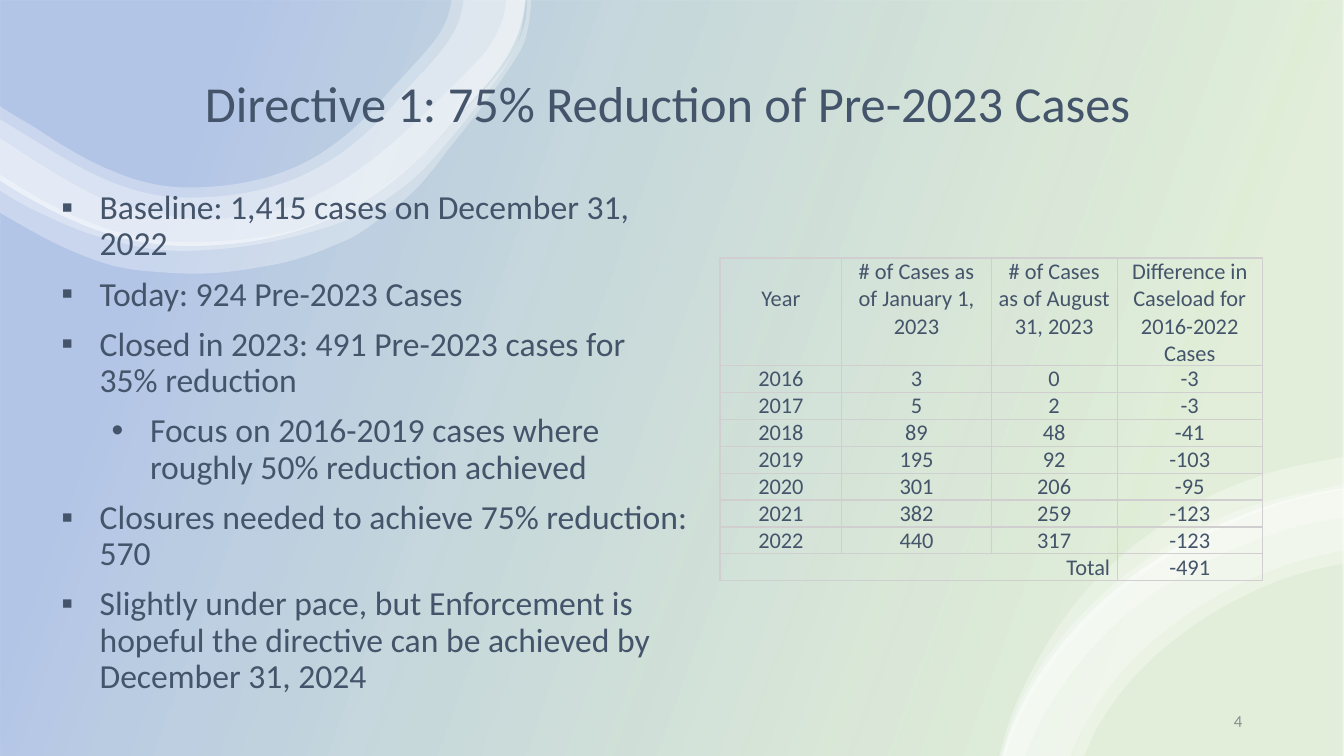
from lxml import etree
from pptx import Presentation
from pptx.dml.color import RGBColor
from pptx.enum import shapes, text
from pptx.oxml import ns
from pptx.util import Inches, Pt

SLATE = RGBColor(0x44, 0x54, 0x6A)
GREY = RGBColor(0x8C, 0x8C, 0x8C)
WHITE = RGBColor(0xFF, 0xFF, 0xFF)
GREEN = RGBColor(0x70, 0xAD, 0x47)
BLUE = RGBColor(0x44, 0x72, 0xC4)
GRID = RGBColor(0xD0, 0xCE, 0xCE)
FONT = "Calibri"


def smooth(*knots):
    padded = [knots[0], *knots, knots[-1]]
    curve = [knots[0]]
    for (ax, ay), (bx, by), (cx, cy), (dx, dy) in zip(padded, padded[1:], padded[2:], padded[3:]):
        curve += [(bx + (cx - ax) / 6, by + (cy - ay) / 6),
                  (cx - (dx - bx) / 6, cy - (dy - by) / 6), (cx, cy)]
    return curve


TOP_OUTER = [(-.02, 1.78), (.03, 1.81), (.09, 1.85), (.14, 1.88),
             (.65, 2.18), (1.17, 2.44), (1.87, 2.44), (3.06, 2.44), (3.83, 1.99), (4.45, 1.26),
             (4.8, .85), (5.17, .56), (5.21, -.01)]
TOP_RIBBONS = [
    (smooth((5.23, -.01), (5.2, .25), (5.07, .56), (4.85, .84), (4.55, 1.16), (4.25, 1.48),
            (3.92, 1.77), (3.43, 2.09), (2.86, 2.3), (2.25, 2.39), (1.62, 2.39),
            (1.03, 2.26), (.48, 2.02), (-.02, 1.72)),
     smooth((-.02, 2.1), (.56, 2.42), (1.1, 2.63), (1.58, 2.7), (2.11, 2.71), (2.64, 2.64),
            (2.98, 2.56), (3.3, 2.44), (3.6, 2.29), (4.1, 1.9), (4.48, 1.44), (4.83, .99),
            (5.15, .52), (5.24, .26), (5.27, -.01))),
    (smooth((5.02, -.01), (4.99, .18), (4.89, .4), (4.74, .6), (4.35, .99), (4.16, 1.18),
            (3.76, 1.53), (3.32, 1.84), (2.82, 2.07), (2.39, 2.15), (1.88, 2.17),
            (1.13, 2.01), (.63, 1.77), (-.02, 1.36)),
     smooth((-.02, 1.88), (.35, 2.09), (.95, 2.34), (1.61, 2.48), (2.29, 2.46), (2.94, 2.34),
            (3.56, 2.13), (4.08, 1.79), (4.48, 1.36), (4.81, .94), (5.05, .6), (5.16, .34),
            (5.22, -.01))),
    ([(4.6, -.01), (4.57, .29), (4.43, .46), (4.17, .74), (4.09, .82), (4.02, .9), (3.95, .99),
      (3.37, 1.67), (2.75, 1.96), (1.87, 1.96), (1.29, 1.96), (.87, 1.72), (.29, 1.36),
      (.19, 1.3), (.08, 1.23), (-.02, 1.17)],
     TOP_OUTER),
    ([(4.48, -.01), (4.45, .26), (4.32, .41), (4.07, .68), (4, .76), (3.92, .84), (3.84, .93),
      (3.57, 1.25), (3.29, 1.48), (2.99, 1.63), (2.67, 1.78), (2.3, 1.86), (1.87, 1.86),
      (1.62, 1.86), (1.39, 1.81), (1.15, 1.71), (.89, 1.61), (.64, 1.46), (.37, 1.28),
      (.24, 1.2), (.11, 1.13), (-.02, 1.04)],
     TOP_OUTER),
]
BOTTOM_OUTER = [(9.94, 7.5), (9.97, 7.42), (9.99, 7.34), (10.02, 7.26),
                (10.49, 6.04), (11.8, 5.1), (13.22, 4.86),
                (13.26, 4.85), (13.3, 4.85), (13.34, 4.84)]
BOTTOM_RIBBONS = [
    (smooth((9.91, 7.5), (10.07, 7), (10.39, 6.38), (10.81, 5.82), (11.34, 5.34),
            (11.95, 4.95), (12.63, 4.68), (13.34, 4.53)),
     smooth((13.34, 4.85), (12.74, 4.99), (12.11, 5.24), (11.52, 5.57), (10.99, 5.98),
            (10.53, 6.47), (10.16, 7.03), (9.97, 7.5))),
    (BOTTOM_OUTER,
     [(13.34, 5.59), (13.11, 5.63), (12.91, 5.68), (12.71, 5.75),
      (12.31, 5.9), (11.94, 6.11), (11.62, 6.37), (11.3, 6.62), (11.05, 6.92), (10.87, 7.24),
      (10.84, 7.3), (10.8, 7.4), (10.75, 7.5)]),
    (smooth((9.93, 7.5), (10.12, 6.96), (10.47, 6.4), (10.93, 5.9), (11.46, 5.49),
            (12.06, 5.16), (12.55, 4.98), (13.34, 4.8)),
     smooth((13.34, 5.13), (12.81, 5.24), (12.21, 5.46), (11.65, 5.75), (11.14, 6.12),
            (10.71, 6.57), (10.36, 7.08), (10.17, 7.5))),
    (BOTTOM_OUTER,
     [(13.34, 5.46), (13.08, 5.51), (12.87, 5.56), (12.66, 5.64),
      (12.25, 5.79), (11.86, 6.01), (11.54, 6.27), (11.2, 6.54), (10.94, 6.85), (10.76, 7.19),
      (10.72, 7.25), (10.66, 7.38), (10.62, 7.5)]),
]

POINTS = [
    ("Baseline: 1,415 cases on December 31, 2022", 0),
    ("Today: 924 Pre-2023 Cases", 0),
    ("Closed in 2023: 491 Pre-2023 cases for 35% reduction", 0),
    ("Focus on 2016-2019 cases where roughly 50% reduction achieved", 1),
    ("Closures needed to achieve 75% reduction: 570", 0),
    ("Slightly under pace, but Enforcement is hopeful the directive can be "
     "achieved by December 31, 2024", 0),
]
BULLETS = [("▪", 0.38), ("•", 0.88)]
CASELOAD = [
    ("Year", "# of Cases as of January 1, 2023", "# of Cases as of August 31, 2023",
     "Difference in Caseload for 2016-2022 Cases"),
    ("2016", "3", "0", "-3"),
    ("2017", "5", "2", "-3"),
    ("2018", "89", "48", "-41"),
    ("2019", "195", "92", "-103"),
    ("2020", "301", "206", "-95"),
    ("2021", "382", "259", "-123"),
    ("2022", "440", "317", "-123"),
    ("Total", "", "", "-491"),
]
COLUMN_WIDTHS = [1.21, 1.48, 1.25, 1.44]
HEADER_HEIGHT, LINE_HEIGHT = 0.75, 0.19


def set_opacity(fill_element, percents):
    for color, percent in zip(fill_element.iter(ns.qn("a:srgbClr")), percents):
        etree.SubElement(color, ns.qn("a:alpha"), val=str(percent * 1000))


def add_backdrop(slide, width, height):
    backdrop = slide.shapes.add_shape(shapes.MSO_SHAPE.RECTANGLE, 0, 0, width, height)
    backdrop.shadow.inherit = False
    backdrop.line.fill.background()
    backdrop.fill.gradient()
    backdrop.fill.gradient_angle = 160
    for stop, color, position in zip(backdrop.fill.gradient_stops, (GREEN, BLUE), (0.16, 0.85)):
        stop.color.rgb = color
        stop.position = position
    set_opacity(backdrop._element.spPr, (20, 40))


def bend(segments):
    for first, second, third in zip(segments[::3], segments[1::3], segments[2::3]):
        first.tag = ns.qn("a:cubicBezTo")
        for segment in (second, third):
            first.append(segment[0])
            segment.getparent().remove(segment)


def add_ribbon(slide, near_edge, far_edge):
    outline = [(Inches(x), Inches(y)) for x, y in near_edge + far_edge]
    builder = slide.shapes.build_freeform(*outline[0])
    builder.add_line_segments(outline[1:], close=True)
    ribbon = builder.convert_to_shape()
    segments = list(ribbon._element.iter(ns.qn("a:lnTo")))
    turn = len(near_edge)
    bend(segments[:turn - 1])
    bend(segments[turn:])
    ribbon.shadow.inherit = False
    ribbon.line.fill.background()
    ribbon.fill.solid()
    ribbon.fill.fore_color.rgb = WHITE
    set_opacity(ribbon._element.spPr, (30,))


def write(paragraph, words, size, color=SLATE, align=text.PP_ALIGN.LEFT):
    paragraph.alignment = align
    run = paragraph.add_run()
    run.text = words
    run.font.name = FONT
    run.font.size = Pt(size)
    run.font.color.rgb = color


def add_frame(slide, left, top, width, height, anchor=text.MSO_ANCHOR.MIDDLE):
    box = slide.shapes.add_textbox(Inches(left), Inches(top), Inches(width), Inches(height))
    frame = box.text_frame
    frame.word_wrap = True
    frame.vertical_anchor = anchor
    return frame


def add_points(slide):
    frame = add_frame(slide, 0.51, 1.84, 6.41, 5.16, text.MSO_ANCHOR.TOP)
    for index, (words, level) in enumerate(POINTS):
        point = frame.add_paragraph() if index else frame.paragraphs[0]
        write(point, words, 24)
        point.level = level
        point.line_spacing = 0.9
        point.space_before = Pt(10)
        mark, indent = BULLETS[level]
        properties = point._p.get_or_add_pPr()
        properties.set("marL", str(Inches(indent)))
        properties.set("indent", str(Inches(-0.38)))
        etree.SubElement(properties, ns.qn("a:buFont"), typeface="Arial")
        etree.SubElement(properties, ns.qn("a:buChar"), char=mark)


def add_borders(cell):
    properties = cell._tc.get_or_add_tcPr()
    for index, side in enumerate(("lnL", "lnR", "lnT", "lnB")):
        border = etree.Element(ns.qn(f"a:{side}"), w=str(Pt(1)))
        fill = etree.SubElement(border, ns.qn("a:solidFill"))
        etree.SubElement(fill, ns.qn("a:srgbClr"), val=str(GRID))
        properties.insert(index, border)


def add_caseload(slide):
    table = slide.shapes.add_table(len(CASELOAD), len(COLUMN_WIDTHS), Inches(7.14), Inches(2.56),
                                   Inches(sum(COLUMN_WIDTHS)), Inches(3.2)).table
    table.first_row = table.horz_banding = False
    for column, width in zip(table.columns, COLUMN_WIDTHS):
        column.width = Inches(width)
    for r, entries in enumerate(CASELOAD):
        table.rows[r].height = Inches(LINE_HEIGHT if r else HEADER_HEIGHT)
        for c, words in enumerate(entries):
            cell = table.cell(r, c)
            cell.margin_left = cell.margin_right = Inches(0.07)
            cell.margin_top = cell.margin_bottom = 0
            cell.fill.background()
            add_borders(cell)
            if words:
                align = text.PP_ALIGN.RIGHT if words == "Total" else text.PP_ALIGN.CENTER
                write(cell.text_frame.paragraphs[0], words, 16, align=align)
    table.cell(0, 0).margin_top = Inches(0.27)
    last = len(CASELOAD) - 1
    for column in (1, 2):
        table.cell(last, column).text_frame.paragraphs[0].font.size = Pt(16)
    table.cell(last, 0).merge(table.cell(last, 2))


def main():
    deck = Presentation()
    deck.slide_width, deck.slide_height = Inches(13.33), Inches(7.5)
    slide = deck.slides.add_slide(deck.slide_layouts[6])
    add_backdrop(slide, deck.slide_width, deck.slide_height)
    for near_edge, far_edge in TOP_RIBBONS + BOTTOM_RIBBONS:
        add_ribbon(slide, near_edge, far_edge)
    title = add_frame(slide, 0.37, 0.54, 12.51, 1.03).paragraphs[0]
    title.line_spacing = 0.9
    write(title, "Directive 1: 75% Reduction of Pre-2023 Cases", 36, align=text.PP_ALIGN.CENTER)
    add_caseload(slide)
    add_points(slide)
    page = add_frame(slide, 9.42, 6.95, 3, 0.4).paragraphs[0]
    write(page, "4", 12, GREY, text.PP_ALIGN.RIGHT)
    deck.save("out.pptx")


if __name__ == "__main__":
    main()
